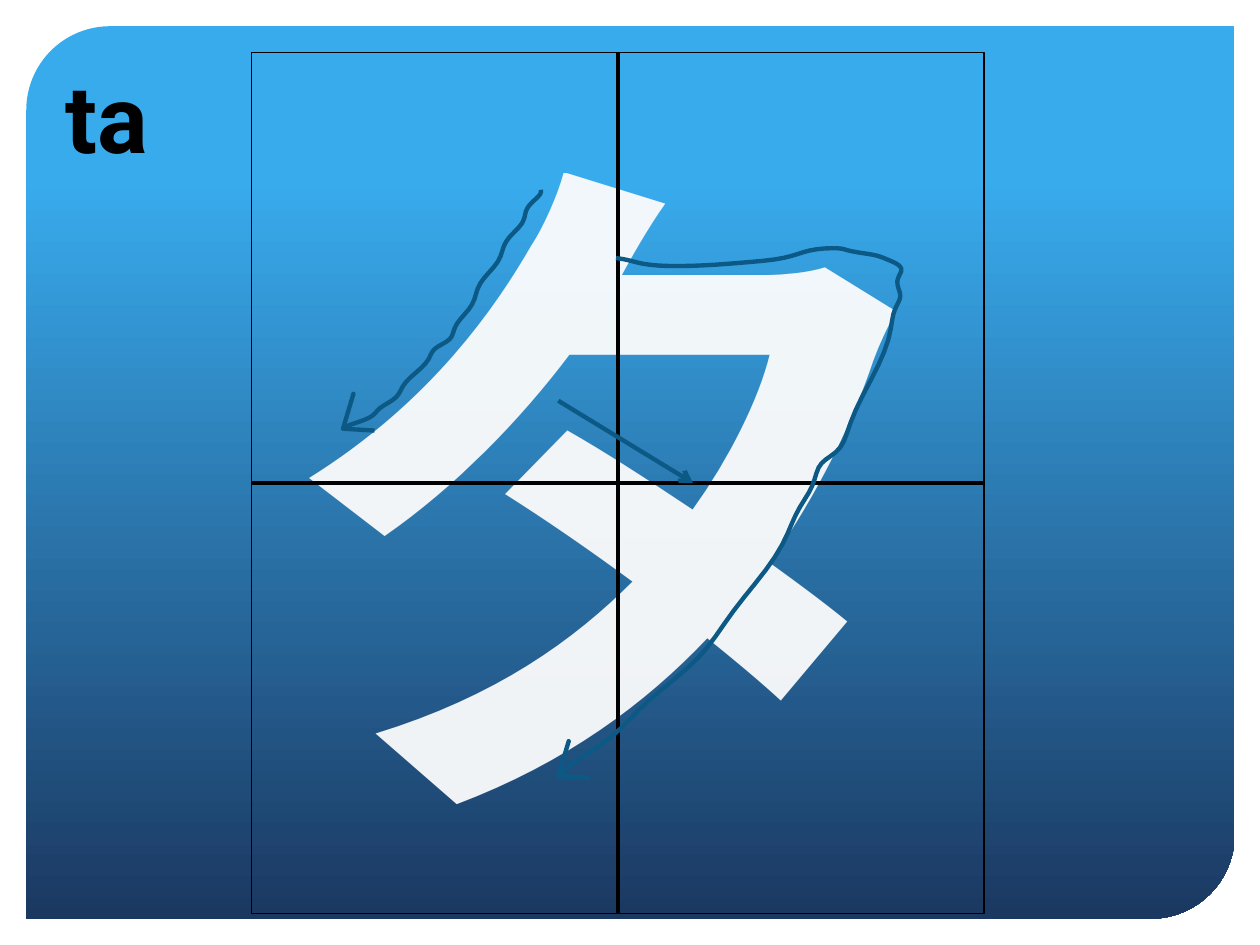
from dataclasses import dataclass
from math import pi, sin
from typing import NamedTuple, Optional

from lxml.etree import SubElement
from pptx import Presentation
from pptx.dml.color import RGBColor
from pptx.enum.shapes import MSO_CONNECTOR, MSO_SHAPE
from pptx.enum.text import MSO_ANCHOR, PP_ALIGN
from pptx.oxml.ns import qn
from pptx.util import Pt


@dataclass(frozen=True)
class Theme:
    sky: str = "38ABED"
    navy: str = "1B3861"
    ink: str = "000000"
    stroke: str = "0C5986"
    kana: str = "FCFCFC"
    kana_font: str = "Noto Sans CJK JP"
    label_font: str = "Roboto"
    kana_size: float = 400
    label_size: float = 54
    frame_width: float = 0.75
    line_width: float = 2.5


class Point(NamedTuple):
    x: float
    y: float


@dataclass(frozen=True)
class Box:
    x: float
    y: float
    w: float
    h: float

    def emu(self) -> tuple:
        return Pt(self.x), Pt(self.y), Pt(self.w), Pt(self.h)

    def at(self, across: float, down: float) -> Point:
        return Point(self.x + across * self.w, self.y + down * self.h)


@dataclass(frozen=True)
class Line:
    start: Point
    end: Point
    color: str
    arrow: bool = False


@dataclass(frozen=True)
class Stroke:
    start: Point
    bends: tuple
    tip: Point

    def keys(self) -> list:
        return [self.start, *(Point(*bend) for bend in self.bends), self.tip]


T = Theme()
PANEL = Box(15, 15, 690.5, 510)
FRAME = Box(143.8, 30, 418.5, 492)
LABEL = Box(30, 29.5, 62, 73)

GUIDES = [
    Line(FRAME.at(0.5, 0), FRAME.at(0.5, 1), T.ink),
    Line(FRAME.at(0, 0.5), FRAME.at(1, 0.5), T.ink),
]
SWEEP = Stroke(
    start=Point(309, 108.5),
    bends=((300, 123), (287, 143.5), (272, 168), (259, 190), (246, 203), (229, 223), (214.5, 236)),
    tip=Point(196, 245),
)
HOOK = Stroke(
    start=Point(352, 147.5),
    bends=((382.5, 152), (436.5, 149), (471, 142), (492, 144.5), (512, 150.5), (513.5, 165),
           (509, 188), (484, 247.5), (466.5, 270.5), (450, 305), (409, 363.5), (360.5, 410.5)),
    tip=Point(319, 443.5),
)
DOT = Line(Point(319, 229), Point(396, 276), T.stroke, arrow=True)

BARBS = (Point(6, -20), Point(18, 1))
STEPS = 8
WOBBLE = 1.2


def rgb(color: str) -> RGBColor:
    return RGBColor.from_string(color)


def spline(a: float, b: float, c: float, d: float, t: float) -> float:
    return b + t / 2 * (c - a + t * (2 * a - 5 * b + 4 * c - d + t * (3 * (b - c) + d - a)))


def hand_curve(keys: list) -> list:
    padded = [keys[0], *keys, keys[-1]]
    curve = [keys[0]]
    for four in zip(padded, padded[1:], padded[2:], padded[3:]):
        for step in range(1, STEPS + 1):
            t = step / STEPS
            x, y = (spline(*values, t) for values in zip(*four))
            curve.append(Point(x + WOBBLE * sin(2 * pi * t), y))
    return curve


def arrowhead(tip: Point) -> list:
    first, second = (Point(tip.x + barb.x, tip.y + barb.y) for barb in BARBS)
    return [first, tip, second]


def add_panel(s, box: Box) -> None:
    sp = s.shapes.add_shape(MSO_SHAPE.ROUND_2_DIAG_RECTANGLE, *box.emu())
    sp.shadow.inherit = False
    sp.adjustments[0], sp.adjustments[1] = 0.094, 0
    sp.line.fill.background()
    sp.fill.gradient()
    sp.fill.gradient_angle = 270
    for stop, pos, color in zip(sp.fill.gradient_stops, (0.17, 1), (T.sky, T.navy)):
        stop.position = pos
        stop.color.rgb = rgb(color)


def add_text(sp, text: str, *, font: str, size: float, color: str, alpha: Optional[int] = None,
             spacing: Optional[int] = None, inset_bottom: float = 3.6) -> None:
    tf = sp.text_frame
    tf.word_wrap = False
    tf.vertical_anchor = MSO_ANCHOR.MIDDLE
    tf.margin_bottom = Pt(inset_bottom)
    p = tf.paragraphs[0]
    p.alignment = PP_ALIGN.CENTER
    r = p.add_run()
    r.text = text
    r.font.name, r.font.size, r.font.bold = font, Pt(size), True
    r.font.color.rgb = rgb(color)
    rpr = r.font._element
    SubElement(rpr, qn("a:ea")).set("typeface", font)
    if alpha is not None:
        clr = rpr.find(qn("a:solidFill")).find(qn("a:srgbClr"))
        SubElement(clr, qn("a:alpha")).set("val", str(alpha * 1000))
    if spacing is not None:
        rpr.set("spc", str(spacing))


def outline(sp, color: str, width: float) -> None:
    sp.shadow.inherit = False
    sp.fill.background()
    sp.line.color.rgb = rgb(color)
    sp.line.width = Pt(width)


def add_frame(s, box: Box):
    sp = s.shapes.add_shape(MSO_SHAPE.RECTANGLE, *box.emu())
    outline(sp, T.ink, T.frame_width)
    return sp


def add_line(s, line: Line) -> None:
    ends = (Pt(v) for v in (*line.start, *line.end))
    cx = s.shapes.add_connector(MSO_CONNECTOR.STRAIGHT, *ends)
    cx.line.color.rgb = rgb(line.color)
    cx.line.width = Pt(T.line_width)
    if line.arrow:
        SubElement(cx.line._get_or_add_ln(), qn("a:tailEnd")).set("type", "arrow")
    SubElement(cx._element.spPr, qn("a:effectLst"))


def add_stroke(s, stroke: Stroke) -> None:
    points = hand_curve(stroke.keys()) + arrowhead(stroke.tip)
    start, *rest = [(Pt(x), Pt(y)) for x, y in points]
    fb = s.shapes.build_freeform(*start)
    fb.add_line_segments(rest, close=False)
    outline(fb.convert_to_shape(), T.stroke, T.line_width)


def main() -> None:
    """Build the stroke-order slide for the kana ta."""
    prs = Presentation()
    prs.slide_width, prs.slide_height = Pt(720), Pt(540)
    s = prs.slides.add_slide(prs.slide_layouts[6])
    add_panel(s, PANEL)
    add_text(add_frame(s, FRAME), "タ", font=T.kana_font, size=T.kana_size,
             color=T.kana, alpha=95, spacing=50, inset_bottom=8.2)
    for guide in GUIDES:
        add_line(s, guide)
    add_text(s.shapes.add_textbox(*LABEL.emu()), "ta", font=T.label_font,
             size=T.label_size, color=T.ink)
    for stroke in (SWEEP, HOOK):
        add_stroke(s, stroke)
    add_line(s, DOT)
    prs.save("out.pptx")


if __name__ == "__main__":
    main()
